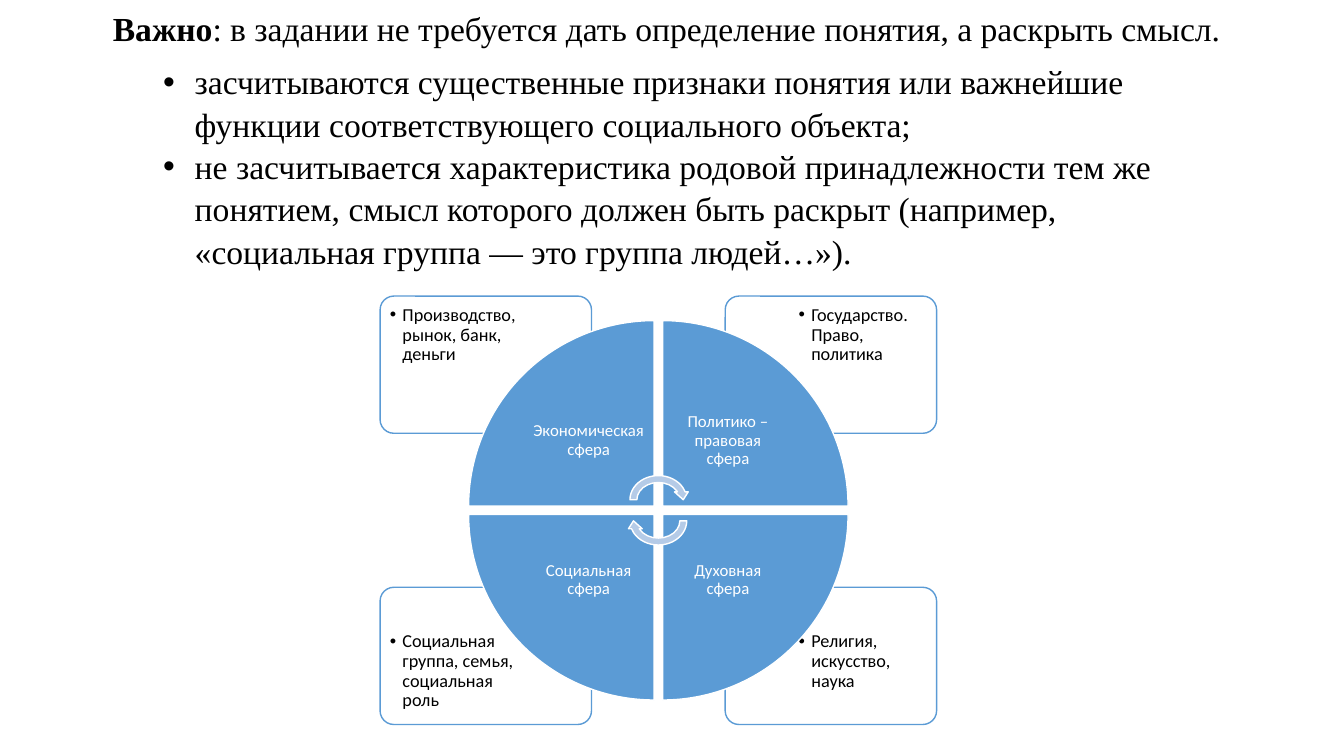
from dataclasses import dataclass

from lxml import etree
from pptx import Presentation
from pptx import util as u
from pptx.dml.color import RGBColor
from pptx.enum import shapes, text
from pptx.oxml.ns import qn


@dataclass(frozen=True)
class Theme:
    black: str = "000000"
    white: str = "FFFFFF"
    blue: str = "5B9BD5"
    pale: str = "B5CBE7"
    serif: str = "Times New Roman"
    sans: str = "Calibri"
    body: int = 24
    note: int = 13
    label: int = 12


THEME = Theme()
RULE = "Важно", ": в задании не требуется дать определение понятия, а раскрыть смысл."
CRITERIA = [
    "засчитываются существенные признаки понятия или важнейшие функции "
    "соответствующего социального объекта;",
    "не засчитывается характеристика родовой принадлежности тем же понятием, "
    "смысл которого должен быть раскрыт (например, "
    "«социальная группа — это группа людей…»).",
]
# column, row, sphere, examples: clockwise from the top left
SPHERES = [
    (0, 0, "Экономическая сфера", "Производство, рынок, банк, деньги"),
    (1, 0, "Политико – правовая сфера", "Государство. Право, политика"),
    (1, 1, "Духовная сфера", "Религия, искусство, наука"),
    (0, 1, "Социальная сфера", "Социальная группа, семья, социальная роль"),
]


def pts(*lengths):
    return [u.Pt(n) for n in lengths]


def style(p, font, size, color):
    for r in p.runs:
        r.font.name, r.font.size = font, u.Pt(size)
        r.font.color.rgb = RGBColor.from_string(color)


def bullet(p, margin, hang):
    p.level = 1
    pPr = p._p.get_or_add_pPr()
    pPr.set("marL", str(u.Pt(margin)))
    pPr.set("indent", str(-u.Pt(hang)))
    etree.SubElement(pPr, qn("a:buFont")).set("typeface", "Arial")
    etree.SubElement(pPr, qn("a:buChar")).set("char", "•")


def add_text(parent, box, inset=None):
    tf = parent.add_textbox(*pts(*box)).text_frame
    tf.word_wrap = True
    if inset is not None:
        tf.margin_left = tf.margin_top = u.Pt(inset)
        tf.margin_right = tf.margin_bottom = u.Pt(inset)
    return tf


def add_filled(parent, kind, box, fill, line, rotation=0):
    sp = parent.add_shape(kind, *pts(*box))
    sp.shadow.inherit = False
    sp.rotation = rotation
    sp.fill.solid()
    sp.fill.fore_color.rgb = RGBColor.from_string(fill)
    sp.line.color.rgb = RGBColor.from_string(line)
    sp.line.width = u.Pt(1)
    return sp


def add_rule(parent, box):
    tf = add_text(parent, box)
    p = tf.paragraphs[0]
    for part in RULE:
        p.add_run().text = part
    p.runs[0].font.bold = True
    p.line_spacing, p.space_after = 1.07, u.Pt(8)
    style(p, THEME.serif, THEME.body, THEME.black)
    for criterion in CRITERIA:
        p = tf.add_paragraph()
        p.text = criterion
        p.line_spacing = 1.05
        bullet(p, 58.5, 22.5)
        style(p, THEME.serif, THEME.body, THEME.black)


def add_card(parent, box, col, row, examples):
    """Corner card whose text keeps to the side away from the wheel."""
    x, y, w, h = box
    card = add_filled(parent, shapes.MSO_SHAPE.ROUNDED_RECTANGLE, box,
                      THEME.white, THEME.blue)
    card.adjustments[0] = 0.1
    color = card.fill._xPr.find(qn("a:solidFill"))[0]
    etree.SubElement(color, qn("a:alpha")).set("val", "90000")
    text_w, text_h, edge = 101.5, 69, 2
    text_x = x + w - text_w - edge if col else x + edge
    text_y = y + h - text_h - edge if row else y + edge
    p = add_text(parent, (text_x, text_y, text_w, text_h), 5).paragraphs[0]
    p.text = examples
    p.line_spacing = 0.9
    bullet(p, 9, 9)
    style(p, THEME.sans, THEME.note, THEME.black)


def add_wedge(parent, center, col, row, rotation, sphere):
    size, label, gap = 132.5, 93.5, 3

    def quadrant(side):
        return [c + gap if far else c - gap - side
                for c, far in zip(center, (col, row))] + [side, side]

    add_filled(parent, shapes.MSO_SHAPE.PIE_WEDGE, quadrant(size),
               THEME.blue, THEME.white, rotation)
    tf = add_text(parent, quadrant(label), 6.5)
    tf.vertical_anchor = text.MSO_ANCHOR.MIDDLE
    p = tf.paragraphs[0]
    p.text = sphere
    p.alignment, p.line_spacing = text.PP_ALIGN.CENTER, 0.9
    style(p, THEME.sans, THEME.label, THEME.white)


def add_cycle(parent, box):
    x, y, w, h = box
    cx, cy = x + w / 2, y + h / 2
    card_w, card_h = 151, 98
    for col, row, _, examples in reversed(SPHERES):
        corner = x + col * (w - card_w), y + row * (h - card_h)
        add_card(parent, (*corner, card_w, card_h), col, row, examples)
    for i, (col, row, sphere, _) in enumerate(SPHERES):
        add_wedge(parent, (cx, cy), col, row, 90 * i, sphere)
    arrow_w, arrow_h, shift = 45.5, 39.5, 7.5
    for dy, rotation in ((-shift, 0), (shift, 180)):
        add_filled(parent, shapes.MSO_SHAPE.CIRCULAR_ARROW,
                   (cx - arrow_w / 2, cy + dy - arrow_h / 2, arrow_w, arrow_h),
                   THEME.pale, THEME.white, rotation)


def main():
    prs = Presentation()
    prs.slide_width, prs.slide_height = pts(960, 540)
    s = prs.slides.add_slide(prs.slide_layouts[6])
    add_rule(s.shapes, (73.5, 0, 810, 211.5))
    add_cycle(s.shapes.add_group_shape().shapes, (271.5, 211.5, 397.5, 306))
    prs.save("out.pptx")


if __name__ == "__main__":
    main()
